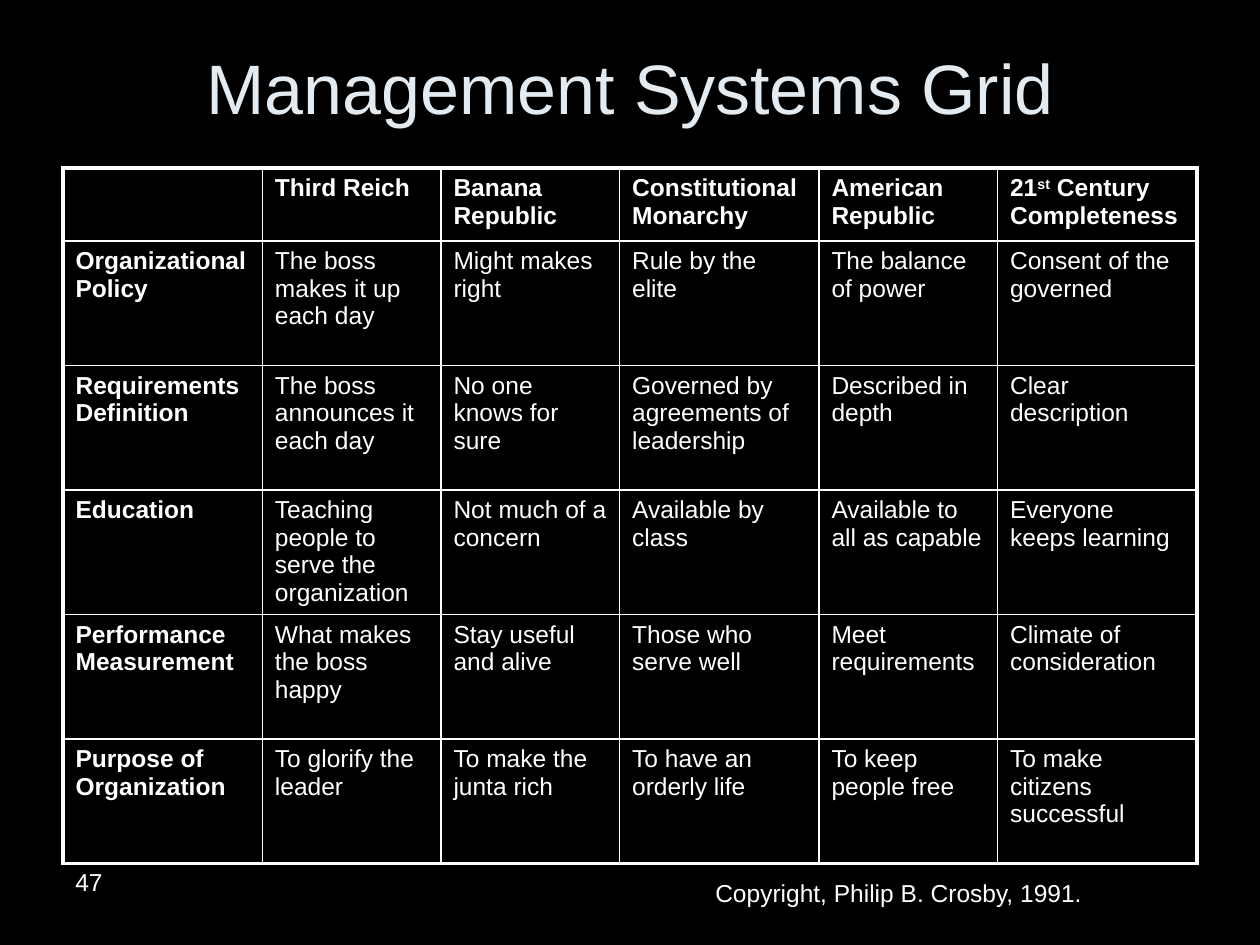
from dataclasses import dataclass

from lxml import etree
from pptx import Presentation
from pptx.dml.color import RGBColor
from pptx.enum.text import MSO_ANCHOR, PP_ALIGN
from pptx.oxml.ns import qn
from pptx.util import Cm, Pt

CENTER = PP_ALIGN.CENTER
MIDDLE = MSO_ANCHOR.MIDDLE

BLACK = RGBColor(0x00, 0x00, 0x00)
WHITE = RGBColor(0xFF, 0xFF, 0xFF)
TITLE_COLOR = RGBColor(0xE3, 0xEB, 0xF1)

FONT = "Arial"
INNER_BORDER = Pt(1)
OUTER_BORDER = Pt(2.25)
WIDE, NARROW = 4.02, 3.6
COLUMN_WIDTHS = (WIDE, NARROW, NARROW, WIDE, NARROW, WIDE)
HEADER_HEIGHT, ROW_HEIGHT = 1.47, 2.51

HEADERS = ("", "Third Reich", "Banana Republic", "Constitutional Monarchy",
           "American Republic", "21^st^ Century Completeness")


@dataclass(frozen=True)
class Aspect:
    name: str
    descriptions: tuple[str, ...]


@dataclass(frozen=True)
class Note:
    text: str
    left: float
    top: float
    width: float
    height: float


ASPECTS = (
    Aspect("Organizational Policy", (
        "The boss makes it up each day", "Might makes right", "Rule by the elite",
        "The balance of power", "Consent of the governed")),
    Aspect("Requirements Definition", (
        "The boss announces it each day", "No one knows for sure",
        "Governed by agreements of leadership", "Described in depth",
        "Clear description")),
    Aspect("Education", (
        "Teaching people to serve the organization", "Not much of a concern",
        "Available by class", "Available to all as capable",
        "Everyone keeps learning")),
    Aspect("Performance Measurement", (
        "What makes the boss happy", "Stay useful and alive", "Those who serve well",
        "Meet requirements", "Climate of consideration")),
    Aspect("Purpose of Organization", (
        "To glorify the leader", "To make the junta rich", "To have an orderly life",
        "To keep people free", "To make citizens successful")),
)

NOTES = (
    Note("47", 1.27, 17.35, 5.92, 1.32),
    Note("Copyright, Philip B. Crosby, 1991.", 14.17, 17.58, 9.96, 0.84),
)


def format_font(paragraph, size: float, color: RGBColor, bold: bool = False) -> None:
    font = paragraph.font
    font.name, font.size, font.bold = FONT, Pt(size), bold
    font.color.rgb = color


def write_text(paragraph, text: str) -> None:
    """Write the text, raising whatever stands between two carets."""
    for index, part in enumerate(text.split("^")):
        if part:
            run = paragraph.add_run()
            run.text = part
            if index % 2:
                run.font._element.set("baseline", "30000")


def set_borders(cell, widths: dict[str, int]) -> None:
    properties = cell._tc.get_or_add_tcPr()
    for position, (side, width) in enumerate(widths.items()):
        line = etree.Element(qn(f"a:ln{side}"), w=str(width))
        fill = etree.SubElement(line, qn("a:solidFill"))
        etree.SubElement(fill, qn("a:srgbClr"), val=str(WHITE))
        properties.insert(position, line)


def add_title(slide, text: str) -> None:
    title = slide.shapes.title
    title.left, title.top, title.width, title.height = (
        Cm(1.27), Cm(0.76), Cm(22.86), Cm(1.98))
    title.text_frame.text = text
    title.text_frame.vertical_anchor = MIDDLE
    paragraph = title.text_frame.paragraphs[0]
    paragraph.alignment = CENTER
    format_font(paragraph, 40, TITLE_COLOR)


def add_grid(slide) -> None:
    rows = [HEADERS] + [(aspect.name, *aspect.descriptions) for aspect in ASPECTS]
    heights = [HEADER_HEIGHT] + [ROW_HEIGHT] * len(ASPECTS)
    last_row, last_column = len(rows) - 1, len(HEADERS) - 1
    table = slide.shapes.add_table(
        len(rows), len(HEADERS), Cm(1.27), Cm(3.39),
        Cm(sum(COLUMN_WIDTHS)), Cm(sum(heights))).table
    for column, width in zip(table.columns, COLUMN_WIDTHS):
        column.width = Cm(width)
    for row, height in zip(table.rows, heights):
        row.height = Cm(height)

    for row_index, texts in enumerate(rows):
        for column_index, text in enumerate(texts):
            cell = table.cell(row_index, column_index)
            cell.fill.solid()
            cell.fill.fore_color.rgb = BLACK
            on_edge = {"L": column_index == 0, "R": column_index == last_column,
                       "T": row_index == 0, "B": row_index == last_row}
            set_borders(cell, {side: OUTER_BORDER if outer else INNER_BORDER
                               for side, outer in on_edge.items()})
            paragraph = cell.text_frame.paragraphs[0]
            write_text(paragraph, text)
            format_font(paragraph, 14, WHITE,
                        bold=row_index == 0 or column_index == 0)


def add_note(slide, note: Note) -> None:
    box = slide.shapes.add_textbox(
        Cm(note.left), Cm(note.top), Cm(note.width), Cm(note.height))
    box.text_frame.word_wrap = True
    box.text_frame.text = note.text
    format_font(box.text_frame.paragraphs[0], 14, WHITE)


def main() -> None:
    presentation = Presentation()
    presentation.slide_width, presentation.slide_height = Cm(25.4), Cm(19.05)
    slide = presentation.slides.add_slide(
        presentation.slide_layouts.get_by_name("Title Only"))
    slide.background.fill.solid()
    slide.background.fill.fore_color.rgb = BLACK
    add_title(slide, "Management Systems Grid")
    add_grid(slide)
    for note in NOTES:
        add_note(slide, note)
    presentation.save("out.pptx")


if __name__ == "__main__":
    main()
